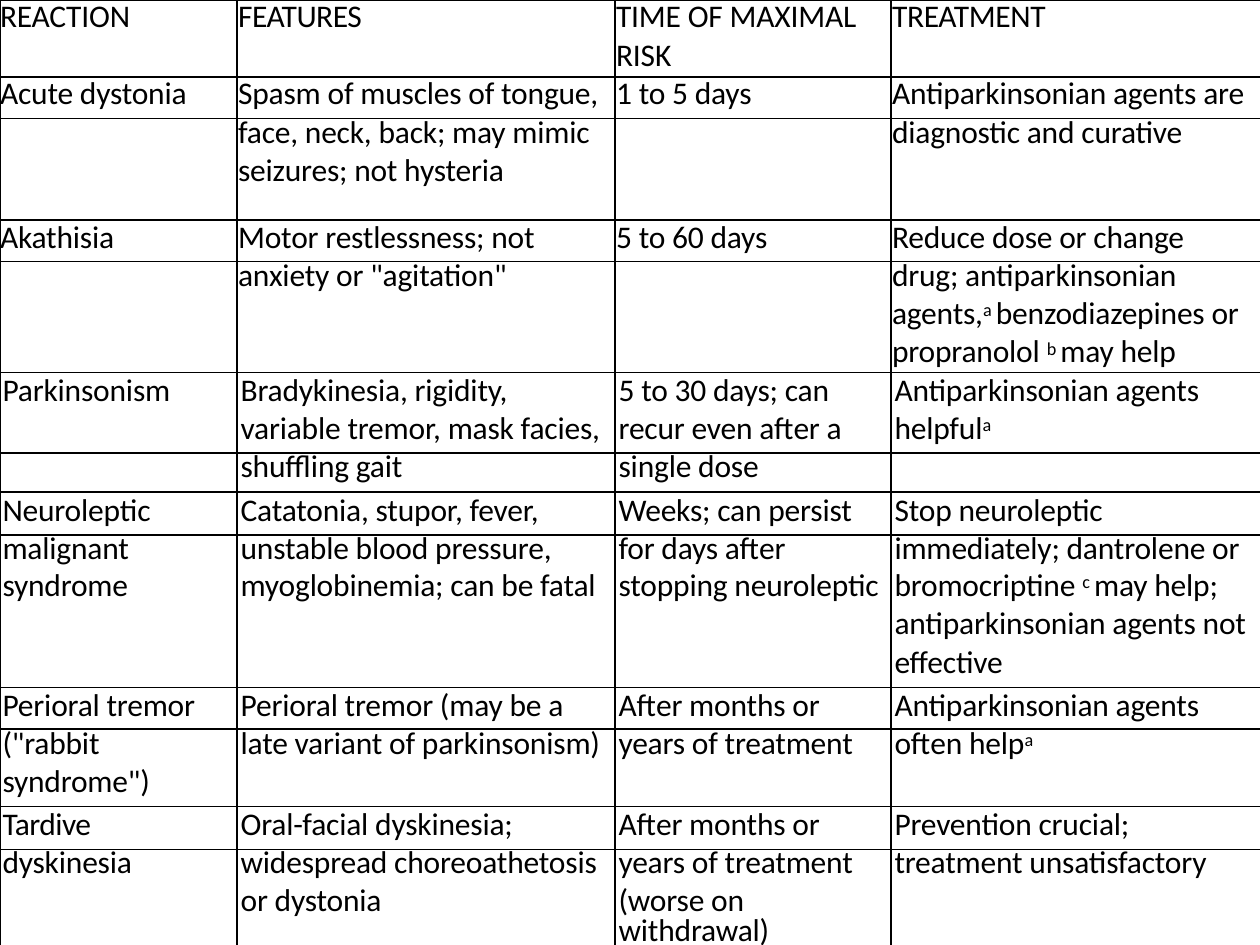
import dataclasses

import pptx
import pptx.dml.color
import pptx.oxml
import pptx.oxml.ns
import pptx.util


@dataclasses.dataclass(frozen=True)
class Theme:
    """Colours, type sizes and line widths of the slide."""

    ink: str = "000000"
    font: str = "Calibri"
    size: float = 18
    tracking: float = -0.1
    superscript: int = 25000
    inner_line: float = 1
    outer_line: float = 0.5


@dataclasses.dataclass(frozen=True)
class Row:
    """One table row: height in grid units, line pitch, rule below, cell texts."""

    height: int
    pitch: float
    ruled: bool
    cells: tuple


THEME = Theme()
SLIDE_WIDTH = pptx.util.Inches(10)
SLIDE_HEIGHT = pptx.util.Inches(7.5)
COLUMN_SHARES = (0.188, 0.3, 0.219, 0.293)
GRID_UNITS = 750
FIRST_INDENTED_ROW = 6
TRACKING = {"FEATURES": -0.3, "TREATMENT": -0.2, "Tardive": -0.3}

ROWS = (
    Row(61, 20.6, True, ("REACTION", "FEATURES", "TIME OF MAXIMAL\nRISK", "TREATMENT")),
    Row(33, 20.9, True, ("Acute dystonia", "Spasm of muscles of tongue,", "1 to 5 days",
                         "Antiparkinsonian agents are")),
    Row(30, 18.9, False, ("", "face, neck, back; may mimic", "", "diagnostic and curative")),
    Row(50, 18.9, True, ("", "seizures; not hysteria", "", "")),
    Row(33, 20.9, True, ("Akathisia", "Motor restlessness; not", "5 to 60 days",
                         "Reduce dose or change")),
    Row(88, 18.9, True, ("", 'anxiety or "agitation"', "",
                         "drug; antiparkinsonian\n"
                         "agents,^a ^benzodiazepines or propranolol ^b ^may help")),
    Row(64, 21.4, True, ("Parkinsonism", "Bradykinesia, rigidity,\nvariable tremor, mask facies,",
                         "5 to 30 days; can\nrecur even after a",
                         "Antiparkinsonian agents\nhelpful^a")),
    Row(31, 18.9, True, ("", "shuffling gait", "single dose", "")),
    Row(34, 21.4, True, ("Neuroleptic", "Catatonia, stupor, fever,", "Weeks; can persist",
                         "Stop neuroleptic")),
    Row(29, 18.9, False, ("malignant", "unstable blood pressure,", "for days after",
                          "immediately; dantrolene or")),
    Row(31, 19.4, False, ("syndrome", "myoglobinemia; can be fatal", "stopping neuroleptic",
                          "bromocriptine ^c ^may help;")),
    Row(30, 18.9, False, ("", "", "", "antiparkinsonian agents not")),
    Row(29, 18.9, True, ("", "", "", "effective")),
    Row(33, 21.5, True, ("Perioral tremor", "Perioral tremor (may be a", "After months or",
                         "Antiparkinsonian agents")),
    Row(31, 19.4, False, ('("rabbit', "late variant of parkinsonism)", "years of treatment",
                          "often help^a")),
    Row(29, 18.9, True, ('syndrome")', "", "", "")),
    Row(34, 21.5, True, ("Tardive", "Oral-facial dyskinesia;", "After months or",
                         "Prevention crucial;")),
    Row(30, 18.9, False, ("dyskinesia", "widespread choreoathetosis", "years of treatment",
                          "treatment unsatisfactory")),
    Row(30, 18.9, False, ("", "or dystonia", "(worse on", "")),
    Row(21, 13.9, False, ("", "", "withdrawal)", "")),
)


def add_border(cell, side, width):
    """Draw one side of a cell, or clear it when the width is zero."""
    properties = cell._tc.get_or_add_tcPr()
    line = pptx.oxml.parse_xml(f'<a:ln{side} {pptx.oxml.ns.nsdecls("a")}/>')
    if width:
        line.set("w", str(int(pptx.util.Pt(width))))
        fill = pptx.oxml.parse_xml(
            f'<a:solidFill {pptx.oxml.ns.nsdecls("a")}><a:srgbClr val="{THEME.ink}"/></a:solidFill>')
    else:
        fill = pptx.oxml.parse_xml(f'<a:noFill {pptx.oxml.ns.nsdecls("a")}/>')
    line.append(fill)
    properties.append(line)


def border_cell(cell, row_index, column_index):
    """Give a cell thin outer edges and heavier inner rules."""
    last_column = len(COLUMN_SHARES) - 1
    above = ROWS[row_index - 1].ruled * THEME.inner_line if row_index else THEME.outer_line
    widths = {
        "L": THEME.inner_line if column_index else THEME.outer_line,
        "R": THEME.inner_line if column_index < last_column else THEME.outer_line,
        "T": above,
        "B": ROWS[row_index].ruled * THEME.inner_line,
    }
    for side, width in widths.items():
        add_border(cell, side, width)


def add_runs(paragraph, text, tracking):
    """Write a line, raising the pieces that stand between carets."""
    formats = {"name": THEME.font, "size": pptx.util.Pt(THEME.size), "bold": False}
    for index, piece in enumerate(text.split("^")):
        if not piece:
            continue
        run = paragraph.add_run()
        run.text = piece
        for name, value in formats.items():
            setattr(run.font, name, value)
        run.font.color.rgb = pptx.dml.color.RGBColor.from_string(THEME.ink)
        properties = run._r.get_or_add_rPr()
        properties.set("spc", str(round(tracking * 100)))
        if index % 2:
            properties.set("baseline", str(THEME.superscript))


def fill_cell(cell, text, pitch, indent):
    """Write the lines of a cell, the first one at the pitch of its row."""
    for side in ("left", "right", "top", "bottom"):
        setattr(cell, f"margin_{side}", 0)
    frame = cell.text_frame
    for index, line in enumerate(text.split("\n")):
        paragraph = frame.add_paragraph() if index else frame.paragraphs[0]
        if not index:
            paragraph.line_spacing = pptx.util.Pt(pitch)
        paragraph._p.get_or_add_pPr().set("marL", str(int(indent)))
        add_runs(paragraph, line, TRACKING.get(text, THEME.tracking))


def add_reaction_table(slide, left, top, width, height):
    """Place the table of reactions in the given box."""
    shape = slide.shapes.add_table(len(ROWS), len(COLUMN_SHARES), left, top, width, height)
    table = shape.table
    for name in ("first_row", "horz_banding"):
        setattr(table, name, False)
    for column, share in zip(table.columns, COLUMN_SHARES):
        column.width = int(width * share)
    for row_index, row in enumerate(ROWS):
        table.rows[row_index].height = int(height * row.height / GRID_UNITS)
        base_indent = 0.02 if row_index >= FIRST_INDENTED_ROW else 0
        for column_index, text in enumerate(row.cells):
            cell = table.cell(row_index, column_index)
            indent = base_indent + (0.01 if column_index else 0)
            fill_cell(cell, text, row.pitch, pptx.util.Inches(indent))
            border_cell(cell, row_index, column_index)
            cell.fill.background()


def main():
    """Build and save the slide."""
    presentation = pptx.Presentation()
    presentation.slide_width = SLIDE_WIDTH
    presentation.slide_height = SLIDE_HEIGHT
    slide = presentation.slides.add_slide(presentation.slide_layouts[6])
    add_reaction_table(slide, 0, 0, SLIDE_WIDTH, SLIDE_HEIGHT)
    presentation.save("out.pptx")


if __name__ == "__main__":
    main()
